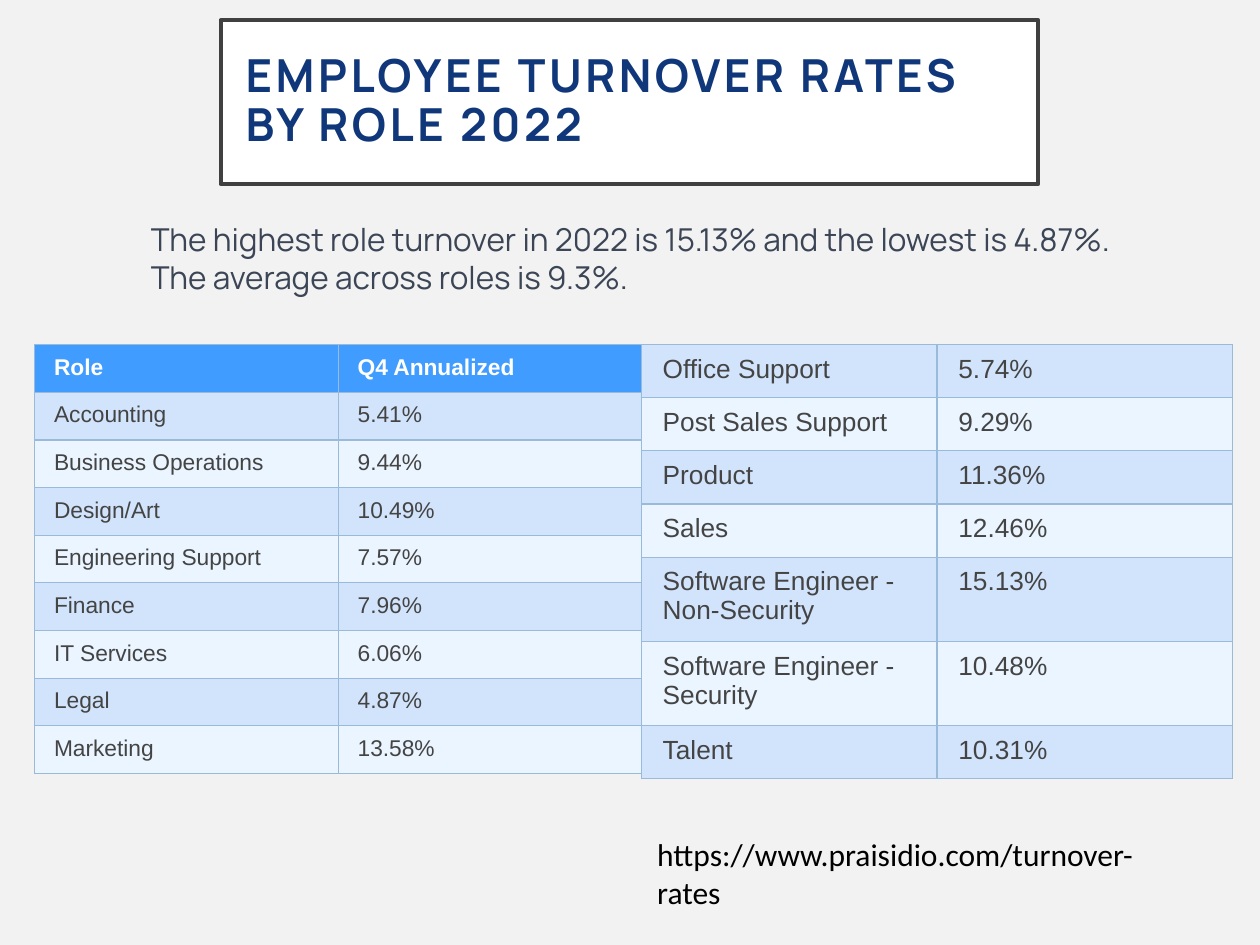
from lxml import etree
from pptx import Presentation
from pptx import util as u
from pptx.dml.color import RGBColor
from pptx.enum import shapes, text
from pptx.oxml import ns

BACKGROUND = RGBColor(0xF2, 0xF2, 0xF2)
WHITE = RGBColor(0xFF, 0xFF, 0xFF)
BLACK = RGBColor(0, 0, 0)
FRAME = RGBColor(0x40, 0x40, 0x40)
NAVY = RGBColor(0x10, 0x37, 0x7A)
SLATE = RGBColor(0x3B, 0x45, 0x55)
BODY = RGBColor(0x44, 0x44, 0x44)
HEADER = RGBColor(0x40, 0x9C, 0xFF)
BAND_DARK = RGBColor(0xD2, 0xE4, 0xFC)
BAND_LIGHT = RGBColor(0xEB, 0xF5, 0xFF)
BORDER = RGBColor(0x9A, 0xBA, 0xD9)


def write(frame, lines, color, **font_values):
    frame.word_wrap = True
    for index, line in enumerate(lines):
        paragraph = frame.add_paragraph() if index else frame.paragraphs[0]
        paragraph.alignment = text.PP_ALIGN.LEFT
        run = paragraph.add_run()
        run.text = line
        run.font.color.rgb = color
        for name, value in font_values.items():
            setattr(run.font, name, value)


def add_border(cell):
    properties = cell._tc.get_or_add_tcPr()
    for side in ("lnL", "lnR", "lnT", "lnB"):
        line = etree.SubElement(properties, ns.qn(f"a:{side}"), w=str(u.Pt(0.75)))
        fill = etree.SubElement(line, ns.qn("a:solidFill"))
        etree.SubElement(fill, ns.qn("a:srgbClr"), val=str(BORDER))


presentation = Presentation()
presentation.slide_width = u.Cm(25.4)
presentation.slide_height = u.Cm(19.05)
slide = presentation.slides.add_slide(presentation.slide_layouts[6])
slide.background.fill.solid()
slide.background.fill.fore_color.rgb = BACKGROUND

# Title
title = slide.shapes.add_shape(
    shapes.MSO_SHAPE.RECTANGLE, u.Cm(4.45), u.Cm(0.41), u.Cm(16.48), u.Cm(3.3))
title.shadow.inherit = False
title.fill.solid()
title.fill.fore_color.rgb = WHITE
title.line.color.rgb = FRAME
title.line.width = u.Pt(2.5)
title_frame = title.text_frame
title_frame.vertical_anchor = text.MSO_ANCHOR.MIDDLE
for side in ("left", "top", "right", "bottom"):
    setattr(title_frame, f"margin_{side}", u.Cm(0.5))
write(title_frame, ["EMPLOYEE TURNOVER RATES BY ROLE 2022"], NAVY,
      name="Manrope", size=u.Pt(26), bold=True)
title_paragraph = title_frame.paragraphs[0]
title_paragraph.line_spacing = 0.9
title_paragraph.runs[0].font._element.set("spc", "200")

# Summary and source address
text_boxes = [
    ((2.79, 4.32, 21.29, 1.8), SLATE, "Manrope",
     ["The highest role turnover in 2022 is 15.13% and the lowest is 4.87%.",
      "The average across roles is 9.3%."]),
    ((13, 16.71, 11.18, 1.02), BLACK, "Calibri",
     ["https://www.praisidio.com/turnover-rates"]),
]
for bounds, color, font_name, lines in text_boxes:
    box = slide.shapes.add_textbox(*map(u.Cm, bounds))
    write(box.text_frame, lines, color, name=font_name, size=u.Pt(18))

# Turnover tables
left_rows = [
    ("Role", "Q4 Annualized"),
    ("Accounting", "5.41%"),
    ("Business Operations", "9.44%"),
    ("Design/Art", "10.49%"),
    ("Engineering Support", "7.57%"),
    ("Finance", "7.96%"),
    ("IT Services", "6.06%"),
    ("Legal", "4.87%"),
    ("Marketing", "13.58%"),
]
right_rows = [
    ("Office Support", "5.74%"),
    ("Post Sales Support", "9.29%"),
    ("Product", "11.36%"),
    ("Sales", "12.46%"),
    ("Software Engineer - Non-Security", "15.13%"),
    ("Software Engineer - Security", "10.48%"),
    ("Talent", "10.31%"),
]
tables = [
    {"rows": left_rows, "left": 0.7, "column": 6.12, "heights": [0.96] * 9,
     "size": 13, "inset": 0.39, "header": True},
    {"rows": right_rows, "left": 12.93, "column": 5.96,
     "heights": [1.07] * 4 + [1.7] * 2 + [1.07],
     "size": 15, "inset": 0.43, "header": False},
]
for spec in tables:
    rows, heights = spec["rows"], spec["heights"]
    table = slide.shapes.add_table(
        len(rows), 2, u.Cm(spec["left"]), u.Cm(6.95),
        u.Cm(2 * spec["column"]), u.Cm(sum(heights))).table
    table.first_row = spec["header"]
    for column in table.columns:
        column.width = u.Cm(spec["column"])
    for row_index, values in enumerate(rows):
        table.rows[row_index].height = u.Cm(heights[row_index])
        is_header = spec["header"] and row_index == 0
        band = (row_index - spec["header"]) % 2
        fill_color = HEADER if is_header else (BAND_DARK, BAND_LIGHT)[band]
        for column_index, value in enumerate(values):
            cell = table.cell(row_index, column_index)
            cell.margin_left = cell.margin_right = u.Cm(spec["inset"])
            cell.margin_top = cell.margin_bottom = u.Cm(0.2)
            add_border(cell)
            cell.fill.solid()
            cell.fill.fore_color.rgb = fill_color
            write(cell.text_frame, [value], WHITE if is_header else BODY,
                  name="Arial", size=u.Pt(spec["size"]), bold=is_header)

presentation.save("out.pptx")
